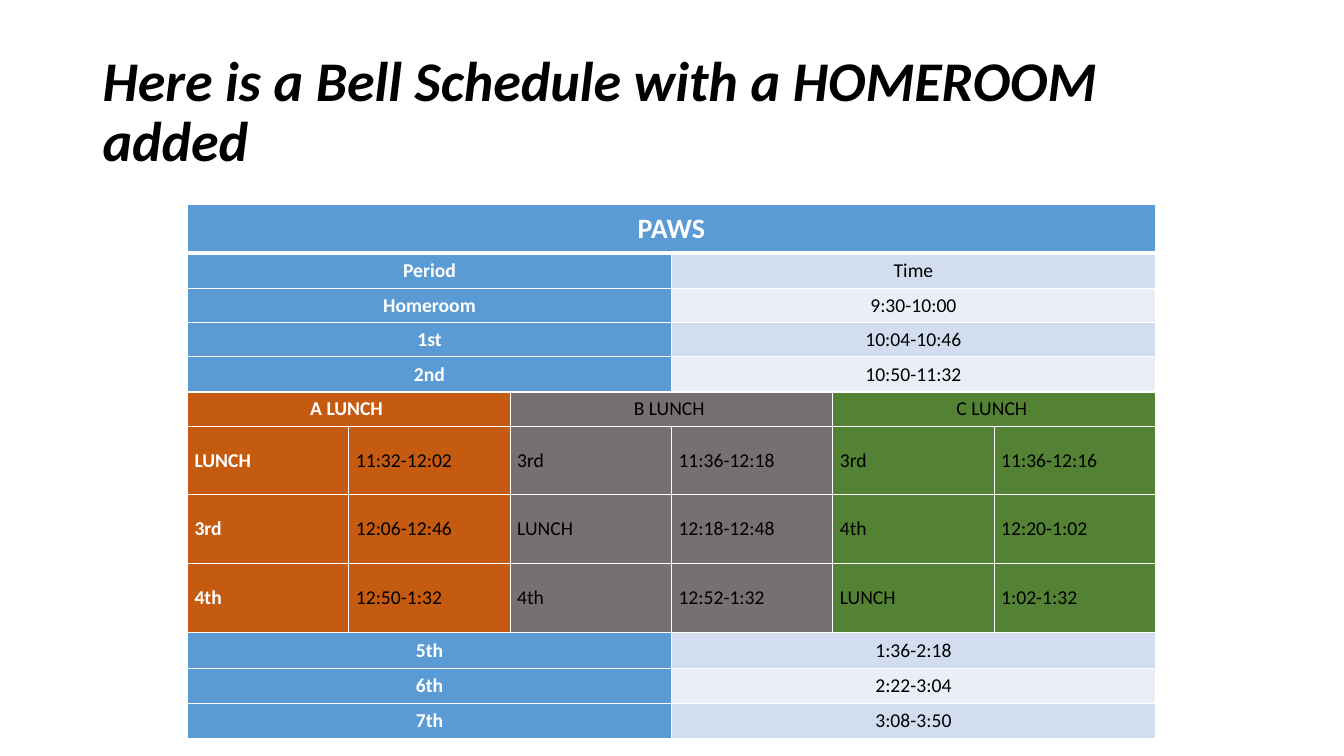
"""Build the bell schedule slide with its homeroom table."""
from dataclasses import dataclass

from lxml.etree import SubElement
from pptx import Presentation
from pptx.dml.color import RGBColor
from pptx.enum.text import MSO_ANCHOR, PP_ALIGN
from pptx.oxml.ns import qn
from pptx.util import Pt

SCALE = 9144
FONT = "Calibri"
COLS, WIDE = 6, 160
HUES = {
    "white": "FFFFFF", "black": "000000", "blue": "5B9BD5",
    "band": "D2DEEF", "pale": "EAEFF7",
    "rust": "C55A11", "gray": "767171", "green": "548235",
}
LUNCH = ("rust", "gray", "green")
PAIRS = tuple(hue for hue in LUNCH for _ in range(2))
BAND, PALE = ("blue", "band"), ("blue", "pale")


@dataclass(frozen=True)
class Row:
    high: int
    hues: tuple[str, ...]
    texts: tuple[str, ...]
    size: int = 14
    top: int = 1
    base: int = 1


ROWS = (
    Row(48, ("blue",), ("PAWS",), size=20, base=3),
    Row(35, BAND, ("Period", "Time"), top=3),
    Row(34, PALE, ("Homeroom", "9:30-10:00")),
    Row(34, BAND, ("1st", "10:04-10:46")),
    Row(35, PALE, ("2nd", "10:50-11:32")),
    Row(34, LUNCH, ("A LUNCH ", "B LUNCH ", "C LUNCH ")),
    Row(68, PAIRS, ("LUNCH", "11:32-12:02", "3rd", "11:36-12:18", "3rd", "11:36-12:16")),
    Row(68, PAIRS, ("3rd", "12:06-12:46", "LUNCH", "12:18-12:48", "4th", "12:20-1:02")),
    Row(69, PAIRS, ("4th", "12:50-1:32", "4th", "12:52-1:32", "LUNCH", "1:02-1:32")),
    Row(35, BAND, ("5th", "1:36-2:18")),
    Row(35, PALE, ("6th", "2:22-3:04")),
    Row(35, BAND, ("7th", "3:08-3:50")),
)


def px(count: int) -> int:
    return count * SCALE


def add_run(para, text: str, size: int, hue: str, bold: bool, slant: bool = False) -> None:
    run = para.add_run()
    run.text = text
    font = run.font
    font.name, font.size = FONT, Pt(size)
    font.bold, font.italic = bold, slant
    font.color.rgb = RGBColor.from_string(HUES[hue])


def edge(cell, row: Row) -> None:
    props = cell._tc.get_or_add_tcPr()
    for side, width in (("L", 1), ("R", 1), ("T", row.top), ("B", row.base)):
        line = SubElement(props, qn(f"a:ln{side}"), w=str(Pt(width)))
        fill = SubElement(line, qn("a:solidFill"))
        SubElement(fill, qn("a:srgbClr"), val=HUES["white"])


def fill_row(table, place: int, row: Row) -> None:
    table.rows[place].height = px(row.high)
    span = COLS // len(row.texts)
    for col in range(COLS):
        cell = table.cell(place, col)
        cell.margin_left = cell.margin_right = px(7)
        cell.margin_top = cell.margin_bottom = 0
        cell.vertical_anchor = MSO_ANCHOR.MIDDLE
        edge(cell, row)
        cell.fill.solid()
        cell.fill.fore_color.rgb = RGBColor.from_string(HUES[row.hues[col // span]])
    for part, text in enumerate(row.texts):
        start = part * span
        cell = table.cell(place, start)
        if span > 1:
            cell.merge(table.cell(place, start + span - 1))
        para = cell.text_frame.paragraphs[0]
        para.alignment = PP_ALIGN.CENTER if span > 1 else PP_ALIGN.LEFT
        first = part == 0
        add_run(para, text, row.size, "white" if first else "black", first)


def add_title(slide) -> None:
    box = slide.shapes.add_textbox(px(92), px(40), px(1150), px(145))
    frame = box.text_frame
    frame.word_wrap = True
    frame.vertical_anchor = MSO_ANCHOR.MIDDLE
    para = frame.paragraphs[0]
    para.line_spacing = 0.9
    add_run(para, "Here is a Bell Schedule with a HOMEROOM added", 40, "black", True, True)


def add_grid(slide) -> None:
    high = sum(row.high for row in ROWS)
    shape = slide.shapes.add_table(len(ROWS), COLS, px(186), px(203), px(COLS * WIDE), px(high))
    table = shape.table
    table.first_row = table.horz_banding = False
    for col in table.columns:
        col.width = px(WIDE)
    for place, row in enumerate(ROWS):
        fill_row(table, place, row)


def main() -> None:
    deck = Presentation()
    deck.slide_width, deck.slide_height = px(1333), px(750)
    slide = deck.slides.add_slide(deck.slide_layouts[6])
    add_title(slide)
    add_grid(slide)
    deck.save("out.pptx")


if __name__ == "__main__":
    main()
